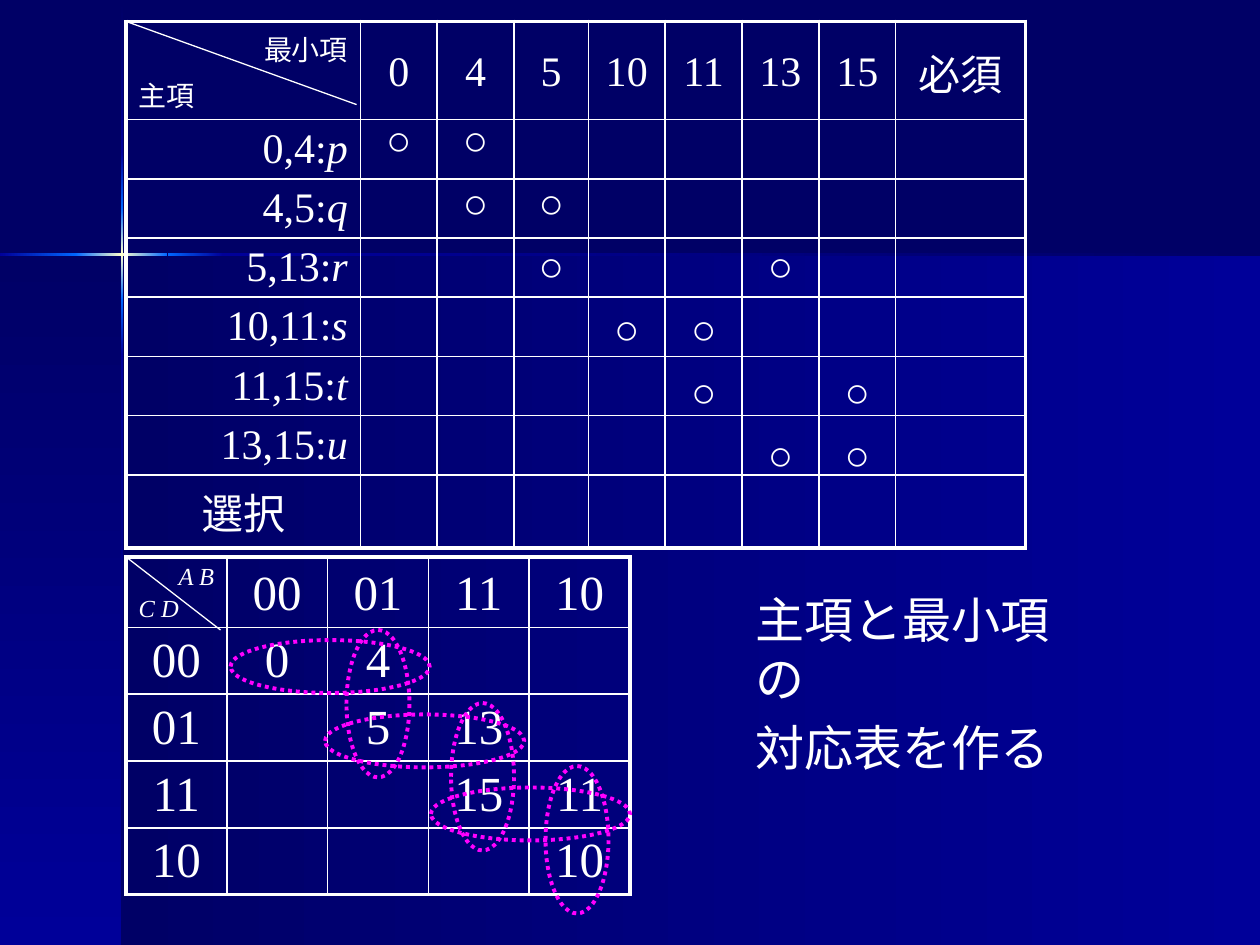
from dataclasses import dataclass
from itertools import accumulate

from lxml import etree
from pptx import Presentation
from pptx.dml.color import RGBColor
from pptx.enum import dml, shapes, text
from pptx.oxml import ns
from pptx.util import Inches, Pt

WHITE = RGBColor(0xFF, 0xFF, 0xFF)
MAGENTA = RGBColor(0xFF, 0x00, 0xFF)
NAVY = RGBColor(0x00, 0x00, 0x66)
BLUE = RGBColor(0x00, 0x00, 0x99)
BRIGHT = RGBColor(0x00, 0x66, 0xFF)
CREAM = RGBColor(0xFF, 0xFF, 0xCC)
FONT = "Times New Roman"
LEFT, CENTER, RIGHT = text.PP_ALIGN.LEFT, text.PP_ALIGN.CENTER, text.PP_ALIGN.RIGHT
OUTER, INNER = Pt(2.25), Pt(1)


@dataclass
class Band:
    box: tuple
    colors: tuple
    angle: int


@dataclass
class Line:
    """One paragraph: upright words, then words in italics."""
    upright: str
    italic: str = ""
    size: float = 24
    align: text.PP_ALIGN = CENTER


@dataclass
class Grid:
    left: float
    top: float
    columns: list
    rows: list
    cells: dict  # (row, column) -> list of Line


# Backdrop: two panels and the glowing cross
GLOW = (BRIGHT, CREAM, BRIGHT)
BANDS = [
    Band((0.97, 2.02, 9.03, 5.48), (NAVY, BLUE), 0),
    Band((0, 2.02, 0.97, 5.48), (NAVY, BLUE), 90),
    Band((0.96, 0.01, 0.02, 1.21), (NAVY, BLUE), 90),
    Band((0.96, 2.82, 0.02, 4.68), (BLUE, NAVY), 90),
    Band((1.77, 2.01, 8.23, 0.02), (BLUE, NAVY), 0),
    Band((0.96, 2.38, 0.02, 0.44), (BRIGHT, BLUE), 90),
    Band((0.96, 1.21, 0.02, 0.44), (BLUE, BRIGHT), 90),
    Band((0.96, 1.65, 0.02, 0.73), GLOW, 90),
    Band((0, 2.01, 0.61, 0.02), (BLUE, BRIGHT), 0),
    Band((1.33, 2.01, 0.44, 0.02), (BRIGHT, BLUE), 0),
    Band((0.6, 2.01, 0.73, 0.02), GLOW, 0),
]

# Karnaugh map: codes along both edges, minterms inside
CODES = ["00", "01", "11", "10"]
MAP_TERMS = {(1, 1): "0", (1, 2): "4", (2, 2): "5", (2, 3): "13",
             (3, 3): "15", (3, 4): "11", (4, 4): "10"}
map_cells = {(0, 0): [Line("", "A B", 14, RIGHT), Line("", "C D", 14, LEFT)]}
for index, code in enumerate(CODES, 1):
    map_cells[0, index] = map_cells[index, 0] = [Line(code, size=28)]
map_cells.update({place: [Line(term, size=28)] for place, term in MAP_TERMS.items()})
KARNAUGH = Grid(1, 4.42, [0.8] * 5, [0.56] + [0.53] * 4, map_cells)
LOOPS = [(1.83, 5.08, 1.58, 0.42), (2.58, 5.67, 1.58, 0.42), (3.42, 6.25, 1.58, 0.42),
         (2.75, 5, 0.5, 1.17), (3.58, 5.58, 0.5, 1.17), (4.33, 6.08, 0.5, 1.17)]

# Prime implicant chart: each implicant covers two minterms
MINTERMS = [0, 4, 5, 10, 11, 13, 15]
IMPLICANTS = {"p": (0, 4), "q": (4, 5), "r": (5, 13),
              "s": (10, 11), "t": (11, 15), "u": (13, 15)}
chart_cells = {(0, 0): [Line("最小項", size=16, align=RIGHT), Line("主項", size=16, align=LEFT)],
               (0, 8): [Line("必須")], (7, 0): [Line("選択")]}
for column, minterm in enumerate(MINTERMS, 1):
    chart_cells[0, column] = [Line(str(minterm))]
for row, (name, pair) in enumerate(IMPLICANTS.items(), 1):
    chart_cells[row, 0] = [Line(f"{pair[0]},{pair[1]}:", name, align=RIGHT)]
COVER = Grid(1, 0.17, [1.86, 0.61, 0.61, 0.59, 0.61, 0.61, 0.61, 0.61, 1.03],
             [0.78] + [0.47] * 6 + [0.58], chart_cells)


def inches(values) -> list:
    return [Inches(value) for value in values]


def write(frame, lines: list) -> None:
    for index, line in enumerate(lines):
        paragraph = frame.paragraphs[0] if index == 0 else frame.add_paragraph()
        paragraph.alignment = line.align
        paragraph.space_before = Pt(0.2 * line.size)
        for words, italic in ((line.upright, False), (line.italic, True)):
            if words:
                run = paragraph.add_run()
                run.text = words
                run.font.color.rgb = WHITE
                formats = {"name": FONT, "size": Pt(line.size), "italic": italic}
                for attribute, value in formats.items():
                    setattr(run.font, attribute, value)


def add_band(slide, band: Band) -> None:
    shape = slide.shapes.add_shape(shapes.MSO_SHAPE.RECTANGLE, *inches(band.box))
    shape.shadow.inherit = False
    shape.line.fill.background()
    shape.fill.gradient()
    gradient = shape.fill._fill._gradFill
    stops = gradient.find(ns.qn("a:gsLst"))
    for stop in list(stops):
        stops.remove(stop)
    for index, color in enumerate(band.colors):
        position = 100000 * index // (len(band.colors) - 1)
        stop = etree.SubElement(stops, ns.qn("a:gs"), pos=str(position))
        etree.SubElement(stop, ns.qn("a:srgbClr"), val=str(color))
    gradient.find(ns.qn("a:lin")).set("ang", str(band.angle * 60000))


def set_borders(cell, widths: dict) -> None:
    properties = cell._tc.get_or_add_tcPr()
    for side, width in widths.items():
        border = etree.SubElement(properties, ns.qn(f"a:ln{side}"), w=str(int(width)))
        fill = etree.SubElement(border, ns.qn("a:solidFill"))
        etree.SubElement(fill, ns.qn("a:srgbClr"), val=str(WHITE))


def add_grid(slide, grid: Grid) -> None:
    last_row, last_column = len(grid.rows) - 1, len(grid.columns) - 1
    box = inches((grid.left, grid.top, sum(grid.columns), sum(grid.rows)))
    table = slide.shapes.add_table(last_row + 1, last_column + 1, *box).table
    table.first_row = table.horz_banding = False
    for column, width in zip(table.columns, grid.columns):
        column.width = Inches(width)
    for r, height in enumerate(grid.rows):
        table.rows[r].height = Inches(height)
        for c in range(last_column + 1):
            cell = table.cell(r, c)
            set_borders(cell, {"L": INNER if c else OUTER,
                               "R": OUTER if c == last_column else INNER,
                               "T": INNER if r else OUTER,
                               "B": OUTER if r == last_row else INNER})
            cell.fill.background()
            cell.margin_top, cell.margin_bottom = Inches(0.05), Inches(0.03)
            if r == 0 and c > 0:
                cell.vertical_anchor = text.MSO_ANCHOR.MIDDLE
            write(cell.text_frame, grid.cells.get((r, c), []))


def add_diagonal(slide, start: tuple, end: tuple) -> None:
    line = slide.shapes.add_connector(shapes.MSO_CONNECTOR.STRAIGHT, *inches(start + end))
    line.line.color.rgb = WHITE
    line.line.width = Pt(0.75)
    etree.SubElement(line._element.spPr, ns.qn("a:effectLst"))


def add_loop(slide, box: tuple) -> None:
    loop = slide.shapes.add_shape(shapes.MSO_SHAPE.OVAL, *inches(box))
    loop.shadow.inherit = False
    loop.fill.background()
    loop.line.color.rgb = MAGENTA
    loop.line.width = Pt(2.25)
    loop.line.dash_style = dml.MSO_LINE.ROUND_DOT


def add_text(slide, box: tuple, lines: list) -> None:
    frame = slide.shapes.add_textbox(*inches(box)).text_frame
    frame.word_wrap = True
    write(frame, lines)


def main() -> None:
    presentation = Presentation()
    presentation.slide_width, presentation.slide_height = Inches(10), Inches(7.5)
    slide = presentation.slides.add_slide(presentation.slide_layouts[6])
    slide.background.fill.solid()
    slide.background.fill.fore_color.rgb = NAVY
    for band in BANDS:
        add_band(slide, band)

    # Karnaugh map with its loops
    add_grid(slide, KARNAUGH)
    add_diagonal(slide, (1, 4.42), (1.75, 5))
    for loop in LOOPS:
        add_loop(slide, loop)

    # Prime implicant chart, caption and coverage marks
    add_grid(slide, COVER)
    add_text(slide, (5.9, 4.63, 2.83, 1.13),
             [Line("主項と最小項の", size=28, align=LEFT), Line("対応表を作る", size=28, align=LEFT)])
    add_diagonal(slide, (1, 0.17), (2.83, 0.83))
    edges = list(accumulate(COVER.columns, initial=COVER.left))
    for row, pair in enumerate(IMPLICANTS.values()):
        for minterm in pair:
            column = MINTERMS.index(minterm) + 1
            box = (edges[column], 0.85 + 0.5 * row, COVER.columns[column], 0.5)
            add_text(slide, box, [Line("○")])
    presentation.save("out.pptx")


if __name__ == "__main__":
    main()
